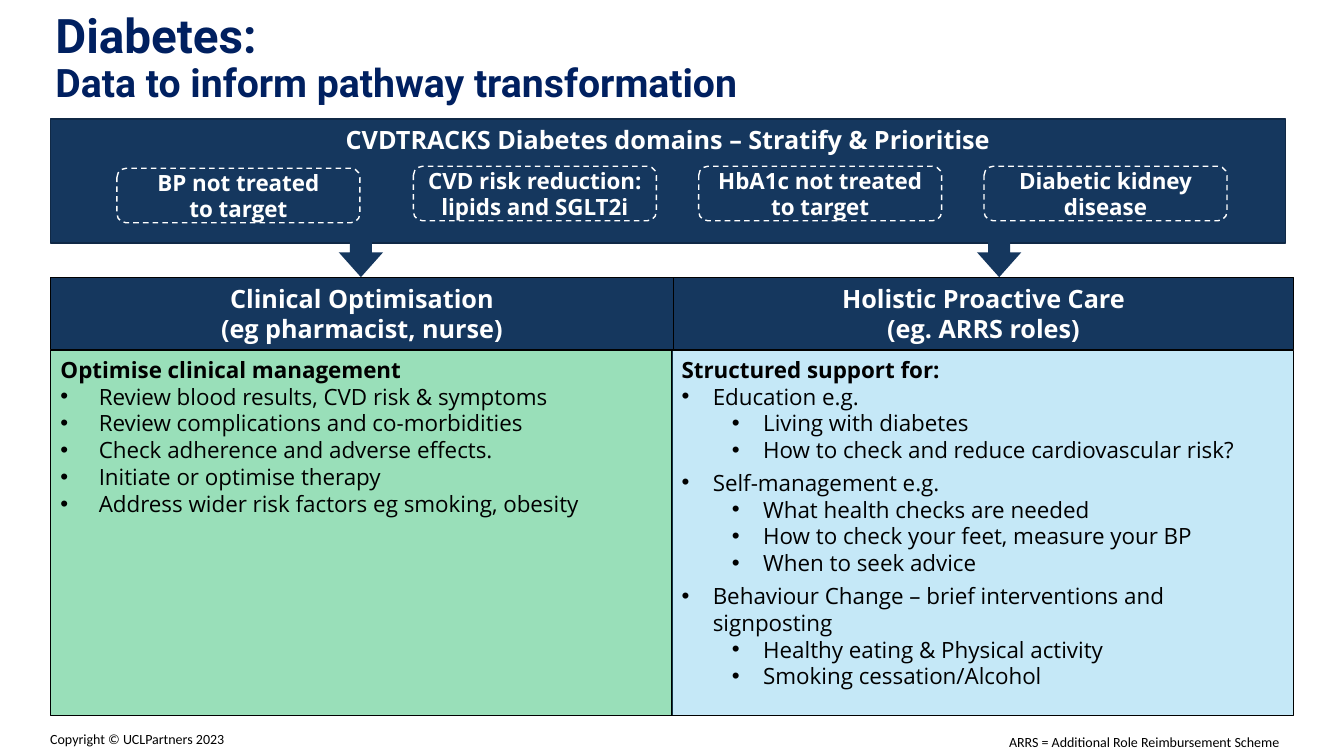
from dataclasses import dataclass

from lxml.etree import SubElement
from pptx import Presentation
from pptx.dml.color import RGBColor
from pptx.enum.dml import MSO_LINE_DASH_STYLE as Dash
from pptx.enum.shapes import MSO_AUTO_SHAPE_TYPE as Preset
from pptx.enum.text import MSO_ANCHOR as Anchor
from pptx.enum.text import MSO_AUTO_SIZE as AutoSize
from pptx.enum.text import PP_ALIGN as Align
from pptx.oxml.ns import qn
from pptx.shapes.autoshape import Shape
from pptx.slide import Slide
from pptx.util import Inches, Pt


@dataclass(frozen=True)
class Theme:
    title: str = "002060"
    navy: str = "15375E"
    navy_edge: str = "102946"
    green: str = "00B050"
    blue: str = "42B6E6"
    black: str = "000000"
    white: str = "FFFFFF"
    title_font: str = "Roboto"
    body_font: str = "Open Sans"
    note_font: str = "Calibri"
    title_size: int = 34
    subtitle_size: int = 28
    heading_size: int = 18
    body_size: int = 16
    note_size: int = 10


@dataclass(frozen=True)
class Area:
    left: float
    top: float
    width: float
    height: float


@dataclass(frozen=True)
class Style:
    font: str
    size: int
    color: str
    bold: bool = False
    align: Align = Align.LEFT


@dataclass(frozen=True)
class Item:
    text: str
    level: int = 0
    before: int = 0


@dataclass(frozen=True)
class Panel:
    area: Area
    color: str
    opacity: int
    indents: tuple[float, ...]
    hanging: float
    heading: str
    items: tuple[Item, ...]


@dataclass(frozen=True)
class Label:
    area: Area
    lines: tuple[str, ...]


THEME = Theme()
TITLE = Style(THEME.title_font, THEME.title_size, THEME.title, True)
SUBTITLE = Style(THEME.title_font, THEME.subtitle_size, THEME.title, True)
HEADING = Style(THEME.body_font, THEME.heading_size, THEME.white, True, Align.CENTER)
DOMAIN = Style(THEME.body_font, THEME.body_size, THEME.white, True, Align.CENTER)
LEAD = Style(THEME.body_font, THEME.body_size, THEME.black, True)
BODY = Style(THEME.body_font, THEME.body_size, THEME.black)
NOTE = Style(THEME.note_font, THEME.note_size, THEME.black)

BANNER = Label(Area(0.5, 1.18, 12.25, 1.23), ("CVDTRACKS Diabetes domains – Stratify & Prioritise",))
DOMAINS = (
    Label(Area(1.16, 1.67, 2.41, 0.54), ("BP not treated", "to target")),
    Label(Area(4.1, 1.65, 2.41, 0.54), ("CVD risk reduction: lipids and SGLT2i",)),
    Label(Area(6.93, 1.65, 2.41, 0.54), ("HbA1c not treated", "to target")),
    Label(Area(9.76, 1.65, 2.41, 0.54), ("Diabetic kidney disease",)),
)
HEADERS = (
    Label(Area(6.68, 2.75, 6.15, 0.72), ("Holistic Proactive Care", "(eg. ARRS roles)")),
    Label(Area(0.5, 2.75, 6.18, 0.72), ("Clinical Optimisation", "(eg pharmacist, nurse)")),
)
ARROWS = tuple(Area(left, 2.28, 0.44, 0.47) for left in (3.36, 9.69))
NOTES = (
    (Label(Area(0.4, 7.2, 1.96, 0.27), ("Copyright © UCLPartners 2023",)), False),
    (Label(Area(9.91, 7.23, 3, 0.27), ("ARRS = Additional Role Reimbursement Scheme",)), True),
)
PANELS = (
    Panel(
        Area(0.5, 3.48, 6.17, 3.62), THEME.green, 40, (0.38,), 0.38,
        "Optimise clinical management",
        (
            Item("Review blood results, CVD risk & symptoms"),
            Item("Review complications and co-morbidities"),
            Item("Check adherence and adverse effects."),
            Item("Initiate or optimise therapy"),
            Item("Address wider risk factors eg smoking, obesity"),
        ),
    ),
    Panel(
        Area(6.66, 3.48, 6.17, 3.62), THEME.blue, 30, (0.31, 0.81), 0.31,
        "Structured support for:",
        (
            Item("Education e.g."),
            Item("Living with diabetes", 1),
            Item("How to check and reduce cardiovascular risk?", 1),
            Item("Self-management e.g.", 0, 4),
            Item("What health checks are needed", 1),
            Item("How to check your feet, measure your BP", 1),
            Item("When to seek advice", 1),
            Item("Behaviour Change – brief interventions and signposting", 0, 4),
            Item("Healthy eating & Physical activity", 1),
            Item("Smoking cessation/Alcohol", 1),
        ),
    ),
)


def place(box: Shape, area: Area) -> None:
    box.left, box.top = Inches(area.left), Inches(area.top)
    box.width, box.height = Inches(area.width), Inches(area.height)


def prepare_text(box: Shape, anchor: Anchor, wrap: bool = True) -> None:
    frame = box.text_frame
    frame.auto_size = AutoSize.NONE
    frame.word_wrap = wrap
    frame.vertical_anchor = anchor
    frame.margin_left = frame.margin_right = Inches(0.1)
    frame.margin_top = frame.margin_bottom = Inches(0.05)


def write(box: Shape, index: int, text: str, style: Style, spacing: float = 1.0):
    frame = box.text_frame
    para = frame.paragraphs[0] if index == 0 else frame.add_paragraph()
    para.alignment = style.align
    para.line_spacing = spacing
    para.space_before = Pt(0)
    span = para.add_run()
    span.text = text
    span.font.name = style.font
    span.font.size = Pt(style.size)
    span.font.bold = style.bold
    span.font.color.rgb = RGBColor.from_string(style.color)
    return para


def paint(box: Shape, fill: str | None, edge: str | None) -> None:
    if fill:
        box.fill.solid()
        box.fill.fore_color.rgb = RGBColor.from_string(fill)
    else:
        box.fill.background()
    if edge:
        box.line.color.rgb = RGBColor.from_string(edge)
        box.line.width = Pt(1)
    else:
        box.line.fill.background()


def add_box(page: Slide, preset: Preset, area: Area, fill: str | None, edge: str | None) -> Shape:
    box = page.shapes.add_shape(preset, 0, 0, 0, 0)
    place(box, area)
    box.shadow.inherit = False
    paint(box, fill, edge)
    return box


def add_label(page: Slide, preset: Preset, label: Label, style: Style, anchor: Anchor,
              fill: str | None, edge: str) -> Shape:
    box = add_box(page, preset, label.area, fill, edge)
    prepare_text(box, anchor)
    for index, text in enumerate(label.lines):
        write(box, index, text, style)
    return box


def fill_panel(box: Shape, panel: Panel) -> None:
    place(box, panel.area)
    paint(box, panel.color, THEME.black)
    color = next(box.fill._xPr.iter(qn("a:srgbClr")))
    SubElement(color, qn("a:alpha"), val=str(panel.opacity * 1000))
    prepare_text(box, Anchor.TOP)
    lead = write(box, 0, panel.heading, LEAD)
    lead_format = lead._p.get_or_add_pPr()
    lead_format.set("marL", "0")
    lead_format.set("indent", "0")
    SubElement(lead_format, qn("a:buNone"))
    for index, item in enumerate(panel.items, 1):
        para = write(box, index, item.text, BODY)
        para.level = item.level
        para.space_before = Pt(item.before)
        para_format = para._p.get_or_add_pPr()
        para_format.set("marL", str(Inches(panel.indents[item.level])))
        para_format.set("indent", str(-Inches(panel.hanging)))
        SubElement(para_format, qn("a:buFont"), typeface="Arial")
        SubElement(para_format, qn("a:buChar"), char="•")


def main() -> None:
    deck = Presentation()
    deck.slide_width, deck.slide_height = Inches(13.33), Inches(7.5)
    page = deck.slides.add_slide(deck.slide_layouts[3])
    title, *bodies = page.placeholders
    place(title, Area(0.45, 0.07, 11.15, 0.6))
    prepare_text(title, Anchor.TOP)
    write(title, 0, "Diabetes:", TITLE, 0.9)
    write(title, 1, "Data to inform pathway transformation", SUBTITLE, 0.9)
    for body, panel in zip(bodies, PANELS):
        fill_panel(body, panel)
    for header in HEADERS:
        add_label(page, Preset.RECTANGLE, header, HEADING, Anchor.MIDDLE, THEME.navy, THEME.black)
    add_label(page, Preset.RECTANGLE, BANNER, HEADING, Anchor.TOP, THEME.navy, THEME.navy_edge)
    for domain in DOMAINS:
        chip = add_label(page, Preset.ROUNDED_RECTANGLE, domain, DOMAIN, Anchor.MIDDLE, None, THEME.white)
        chip.line.dash_style = Dash.DASH
    for area in ARROWS:
        arrow = add_box(page, Preset.DOWN_ARROW, area, THEME.navy, None)
        arrow.adjustments[1] = 0.56
    for note, wrap in NOTES:
        box = page.shapes.add_textbox(0, 0, 0, 0)
        place(box, note.area)
        prepare_text(box, Anchor.TOP, wrap)
        write(box, 0, note.lines[0], NOTE)
    deck.save("out.pptx")


if __name__ == "__main__":
    main()
